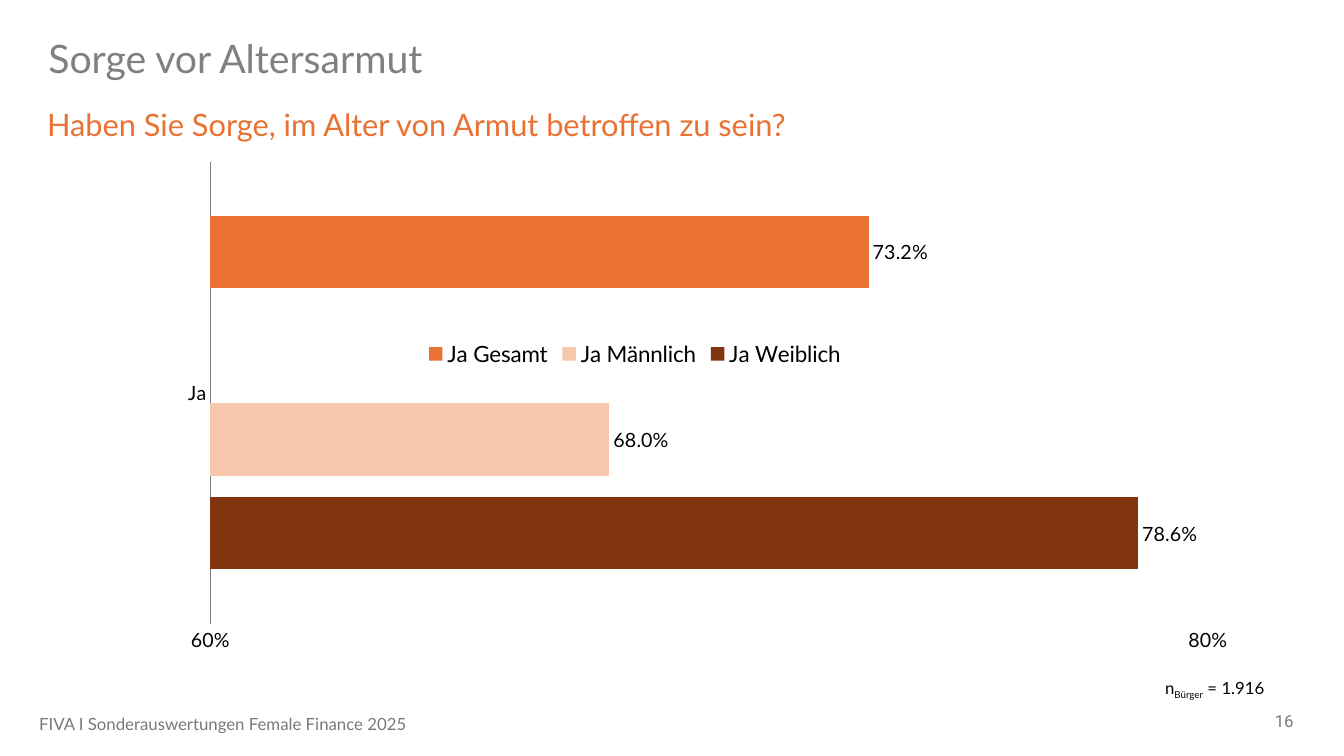
from lxml.etree import SubElement
from pptx import Presentation
from pptx.chart.data import CategoryChartData
from pptx.dml.color import RGBColor
from pptx.enum.chart import XL_CHART_TYPE, XL_LABEL_POSITION, XL_LEGEND_POSITION, XL_TICK_MARK
from pptx.enum.text import MSO_ANCHOR, MSO_AUTO_SIZE, PP_ALIGN
from pptx.oxml.ns import qn
from pptx.util import Inches, Pt

ORANGE, PEACH, BROWN, GREEN = "E97132", "F6C6AD", "80350E", "196B24"
GRAY, FOOTER_GRAY, BLACK = "808080", "797979", "000000"


def color(value):
    return RGBColor.from_string(value)


def add_layout(parent, **values):
    """Place a chart part by fractions of the chart area."""
    manual = SubElement(parent, qn("c:manualLayout"))
    for tag, value in values.items():
        SubElement(manual, qn(f"c:{tag}")).set("val", str(value))


class SlideBuilder:
    def __init__(self, deck):
        self.page = deck.slides.add_slide(deck.slide_layouts[5])
        self.font_name = "Lato"

    def style_font(self, font, size, fill=BLACK, name=None):
        formats = {"name": name or self.font_name, "size": Pt(size), "bold": False}
        for key, value in formats.items():
            setattr(font, key, value)
        font.color.rgb = color(fill)

    def fill_text(self, box, spans, size, fill, align, anchor, name=None):
        frame = box.text_frame
        formats = {"word_wrap": True, "vertical_anchor": anchor,
                   "auto_size": MSO_AUTO_SIZE.NONE}
        for key, value in formats.items():
            setattr(frame, key, value)
        para = frame.paragraphs[0]
        para.alignment = align
        for content, baseline in spans:
            span = para.add_run()
            span.text = content
            self.style_font(span.font, size, fill, name)
            if baseline:
                span._r.get_or_add_rPr().set("baseline", str(baseline * 1000))
        return para

    def title(self, content, area):
        box = self.page.shapes.title
        box.left, box.top, box.width, box.height = map(Inches, area)
        para = self.fill_text(box, [(content, 0)], 28, GRAY, PP_ALIGN.LEFT, MSO_ANCHOR.MIDDLE)
        para.line_spacing = 0.9

    def text(self, spans, area, size, fill, align=PP_ALIGN.LEFT,
             anchor=MSO_ANCHOR.MIDDLE, name=None):
        box = self.page.shapes.add_textbox(*map(Inches, area))
        self.fill_text(box, spans, size, fill, align, anchor, name)

    def bar_chart(self, category, series, area):
        data = CategoryChartData(number_format="0.0%")
        data.categories = [category]
        for name, value, _ in series:
            data.add_series(name, [value])
        chart = self.page.shapes.add_chart(
            XL_CHART_TYPE.BAR_CLUSTERED, *map(Inches, area), data).chart
        chart.has_title = False
        self.style_font(chart.font, 18, name="Roboto")

        # Bars and value labels
        plot = chart.plots[0]
        plot.gap_width, plot.overlap, plot.vary_by_categories = 150, -30, False
        for bars, (_, value, fill) in zip(plot.series, series):
            bars.format.fill.solid()
            bars.format.fill.fore_color.rgb = color(fill)
            if value is not None:
                labels = bars.data_labels
                formats = {"show_value": True, "number_format": "0.0%",
                           "number_format_is_linked": False,
                           "position": XL_LABEL_POSITION.OUTSIDE_END}
                for key, setting in formats.items():
                    setattr(labels, key, setting)
                self.style_font(labels.font, 14)

        # Axes
        for axis in (chart.category_axis, chart.value_axis):
            formats = {"has_major_gridlines": False,
                       "major_tick_mark": XL_TICK_MARK.NONE,
                       "minor_tick_mark": XL_TICK_MARK.NONE}
            for key, setting in formats.items():
                setattr(axis, key, setting)
            self.style_font(axis.tick_labels.font, 14)
        axis_line = chart.category_axis.format.line
        axis_line.color.rgb = color(GRAY)
        axis_line.width = Pt(1)
        values = chart.value_axis
        values.minimum_scale, values.maximum_scale, values.major_unit = 0.6, 0.8, 0.2
        values.format.line.fill.background()
        values.tick_labels.number_format = "0%"
        values.tick_labels.number_format_is_linked = False
        self.place_parts(chart)

    def place_parts(self, chart):
        plot_area = chart._chartSpace.chart.plotArea
        layout = plot_area.find(qn("c:layout"))
        if layout is None:
            layout = SubElement(plot_area, qn("c:layout"))
            plot_area.insert(0, layout)
        add_layout(layout, layoutTarget="inner", xMode="edge", yMode="edge",
                   x=0.12, y=0.04, w=0.85, h=0.82)

        # Legend without the empty spacer series
        chart.has_legend = True
        legend = chart.legend
        legend.position = XL_LEGEND_POSITION.BOTTOM
        legend.include_in_layout = False
        self.style_font(legend.font, 16)
        root = legend._element
        entry = SubElement(root, qn("c:legendEntry"))
        SubElement(entry, qn("c:idx")).set("val", "1")
        SubElement(entry, qn("c:delete")).set("val", "1")
        root.find(qn("c:legendPos")).addnext(entry)
        layout = root.find(qn("c:layout"))
        if layout is None:
            layout = SubElement(root, qn("c:layout"))
        entry.addnext(layout)
        add_layout(layout, xMode="edge", yMode="edge", x=0.3, y=0.35)


def main():
    deck = Presentation()
    deck.slide_width, deck.slide_height = Inches(13.33), Inches(7.5)
    slide = SlideBuilder(deck)

    # Chart, bottom bar first
    slide.bar_chart("Ja", [("Ja Weiblich", 0.786, BROWN), ("Ja Männlich", 0.68, PEACH),
                           ("Spalte1", None, GREEN), ("Ja Gesamt", 0.732, ORANGE)],
                    (0.69, 1.38, 11.64, 5.59))

    # Headings
    slide.title("Sorge vor Altersarmut", (0.38, 0.34, 12.63, 0.53))
    slide.text([("Haben Sie Sorge, im Alter von Armut betroffen zu sein?", 0)],
               (0.37, 1, 9.86, 0.47), 22, ORANGE, anchor=MSO_ANCHOR.TOP)

    # Sample size, page number and footer
    slide.text([("n", 0), ("Bürger", -25), (" = 1.916", 0)], (10.87, 6.67, 1.77, 0.3),
               12, BLACK, PP_ALIGN.RIGHT, MSO_ANCHOR.TOP)
    slide.text([("16", 0)], (9.93, 6.95, 3, 0.4), 12, FOOTER_GRAY,
               PP_ALIGN.RIGHT, name="Roboto")
    slide.text([("FIVA I Sonderauswertungen Female Finance 2025", 0)],
               (0.29, 6.98, 6.7, 0.4), 12, FOOTER_GRAY)

    deck.save("out.pptx")


if __name__ == "__main__":
    main()
